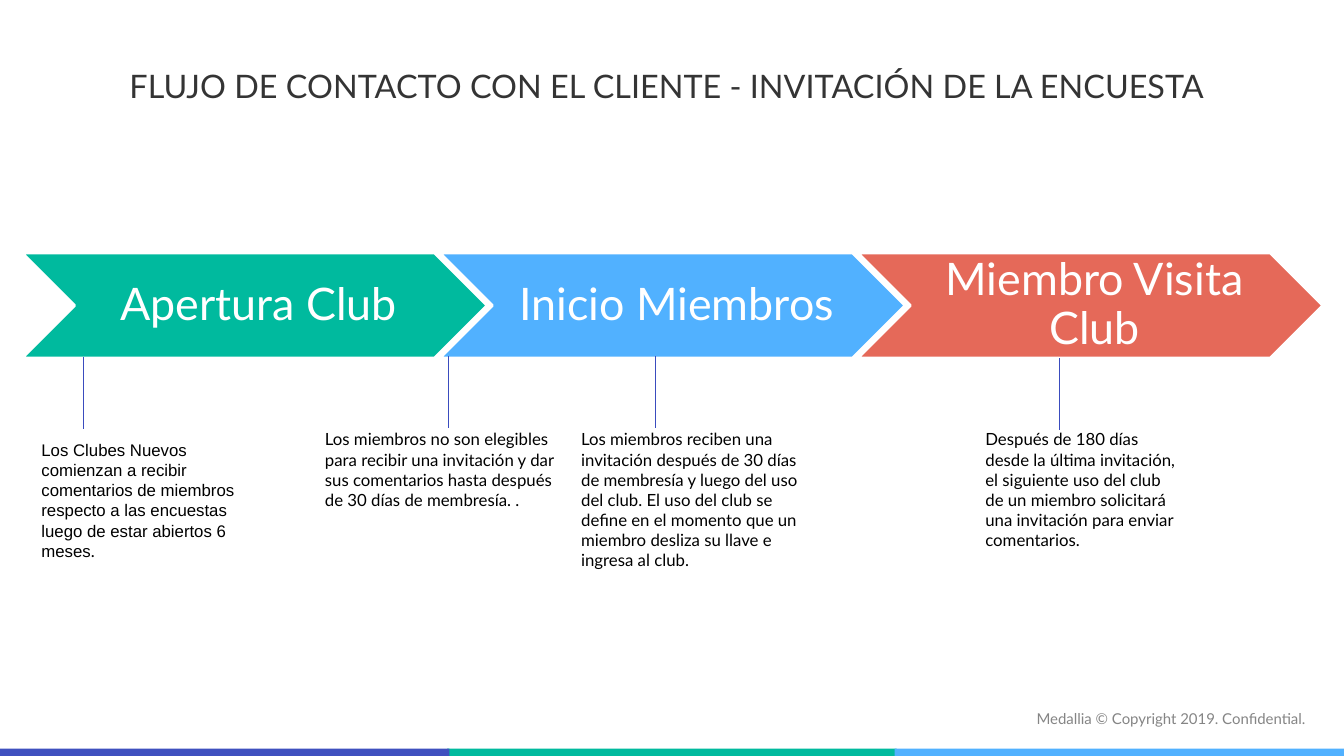
"""Build the customer contact flow slide for the survey invitation."""
from dataclasses import dataclass

from lxml.etree import SubElement
from pptx import Presentation
from pptx.dml.color import RGBColor
from pptx.enum.shapes import MSO_CONNECTOR, MSO_SHAPE
from pptx.enum.text import MSO_ANCHOR, PP_ALIGN
from pptx.oxml.ns import qn
from pptx.util import Emu, Pt

PX = 9525
COLORS = {
    "indigo": "3F50BF", "green": "00BA9E", "blue": "51B1FF", "coral": "E56959",
    "leader": "3A4CBE", "white": "FFFFFF", "black": "000000",
    "heading": "343434", "footer": "858585",
}
FORMATS = {
    "title": {
        "font": {"name": "Lato", "size": Pt(23.1)},
        "paragraph": {"alignment": PP_ALIGN.CENTER, "line_spacing": 0.7},
        "frame": {"word_wrap": True, "vertical_anchor": MSO_ANCHOR.MIDDLE},
    },
    "stage": {
        "font": {"name": "Lato", "size": Pt(32)},
        "paragraph": {"alignment": PP_ALIGN.CENTER, "line_spacing": 0.9},
        "frame": {"word_wrap": True, "vertical_anchor": MSO_ANCHOR.MIDDLE,
                  "margin_left": Emu(13 * PX), "margin_right": Emu(5 * PX),
                  "margin_top": Emu(5 * PX), "margin_bottom": Emu(5 * PX)},
    },
    "note": {
        "font": {"name": "Lato", "size": Pt(12)},
        "paragraph": {"alignment": PP_ALIGN.LEFT},
        "frame": {"word_wrap": True, "vertical_anchor": MSO_ANCHOR.TOP},
    },
    "footer": {
        "font": {"name": "Lato", "size": Pt(10.7)},
        "paragraph": {"alignment": PP_ALIGN.CENTER},
        "frame": {"word_wrap": False, "vertical_anchor": MSO_ANCHOR.TOP,
                  "margin_left": Emu(12 * PX), "margin_right": Emu(12 * PX),
                  "margin_top": Emu(7 * PX), "margin_bottom": Emu(7 * PX)},
    },
}


@dataclass(frozen=True)
class Box:
    x: int
    y: int
    width: int
    height: int

    def emu(self) -> list[Emu]:
        return [Emu(side * PX) for side in (self.x, self.y, self.width, self.height)]


@dataclass(frozen=True)
class Stage:
    name: str
    color: str


@dataclass(frozen=True)
class Note:
    box: Box
    leader_x: int
    leader_y: int
    text: str
    font: str = "Lato"
    ending: str = ""


STAGES = [
    Stage("Apertura Club", "green"),
    Stage("Inicio Miembros", "blue"),
    Stage("Miembro Visita Club", "coral"),
]
NOTES = [
    Note(Box(30, 414, 238, 126), 80, 340,
         "Los Clubes Nuevos comienzan a recibir comentarios de miembros respecto "
         "a las encuestas luego de estar abiertos 6 meses", "Arial", "."),
    Note(Box(300, 404, 238, 107), 427, 339,
         "Los miembros no son elegibles para recibir una invitación y dar sus "
         "comentarios hasta después de 30 días de membresía. ."),
    Note(Box(544, 404, 238, 146), 624, 339,
         "Los miembros reciben una invitación después de 30 días de membresía y "
         "luego del uso del club. El uso del club se define en el momento que un "
         "miembro desliza su llave e ingresa al club."),
    Note(Box(929, 404, 207, 126), 1009, 341,
         "Después de 180 días desde la última invitación, el siguiente uso del "
         "club de un miembro solicitará una invitación para enviar comentarios."),
]


def rgb(color: str) -> RGBColor:
    return RGBColor.from_string(COLORS[color])


def apply(target, values: dict) -> None:
    for attribute, value in values.items():
        setattr(target, attribute, value)


def write(frame, style: str, color: str, *runs: tuple[str, str]) -> None:
    formats = FORMATS[style]
    apply(frame, formats["frame"])
    paragraph = frame.paragraphs[0]
    apply(paragraph, formats["paragraph"])
    for text, font in runs:
        run = paragraph.add_run()
        run.text = text
        apply(run.font, formats["font"] | {"name": font})
        run.font.color.rgb = rgb(color)


def draw_text(slide, box: Box, style: str, color: str, *runs: tuple[str, str]) -> None:
    write(slide.shapes.add_textbox(*box.emu()).text_frame, style, color, *runs)


def draw_shape(slide, kind: MSO_SHAPE, box: Box, color: str):
    shape = slide.shapes.add_shape(kind, *box.emu())
    shape.shadow.inherit = False
    shape.fill.solid()
    shape.fill.fore_color.rgb = rgb(color)
    shape.line.fill.background()
    return shape


def draw_stage(slide, stage: Stage, box: Box) -> None:
    chevron = draw_shape(slide, MSO_SHAPE.CHEVRON, box, stage.color)
    chevron.line.color.rgb = rgb("white")
    chevron.line.width = Pt(2)
    write(chevron.text_frame, "stage", "white", (stage.name, "Lato"))


def draw_note(slide, note: Note) -> None:
    x, top, bottom = (Emu(side * PX) for side in
                      (note.leader_x, note.leader_y, note.leader_y + 69))
    leader = slide.shapes.add_connector(MSO_CONNECTOR.STRAIGHT, x, top, x, bottom)
    leader.line.color.rgb = rgb("leader")
    leader.line.width = Pt(0.75)
    SubElement(leader._element.spPr, qn("a:effectLst"))
    runs = [(note.text, note.font)]
    if note.ending:
        runs.append((note.ending, "Lato"))
    draw_text(slide, note.box, "note", "black", *runs)


def main() -> None:
    deck = Presentation()
    deck.slide_width, deck.slide_height = Emu(1280 * PX), Emu(720 * PX)
    slide = deck.slides.add_slide(deck.slide_layouts[6])
    draw_text(slide, Box(972, 669, 287, 30), "footer", "footer",
              ("Medallia © Copyright 2019. Confidential.", "Lato"))
    for column, color in ((1, "green"), (2, "blue"), (0, "indigo")):
        draw_shape(slide, MSO_SHAPE.RECTANGLE, Box(426 * column, 713, 428, 7), color)
    for column, stage in enumerate(STAGES):
        draw_stage(slide, stage, Box(21 + 398 * column, 241, 443, 100))
    for note in NOTES:
        draw_note(slide, note)
    draw_text(slide, Box(54, 45, 1163, 83), "title", "heading",
              ("FLUJO DE CONTACTO CON EL CLIENTE - INVITACIÓN DE LA ENCUESTA", "Lato"))
    deck.save("out.pptx")


if __name__ == "__main__":
    main()
